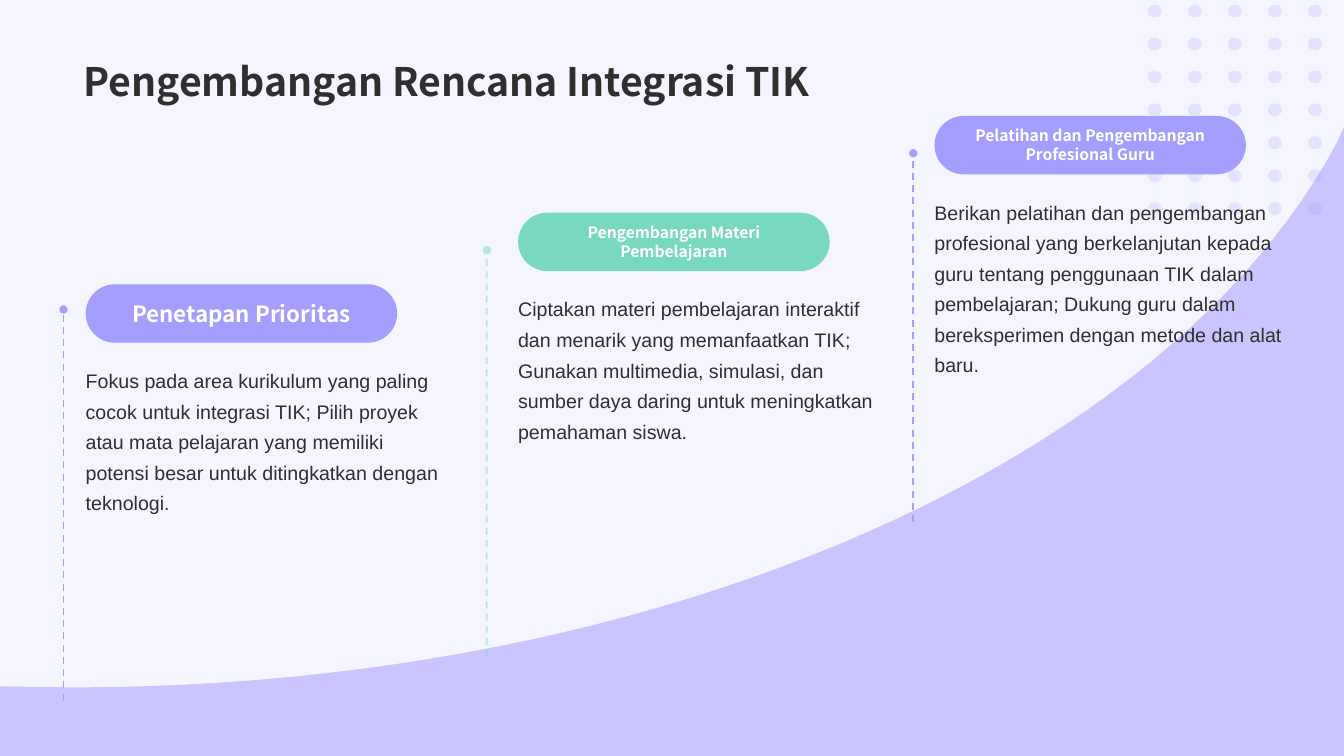
import dataclasses
import itertools

import pptx
import pptx.dml.color
import pptx.enum.dml
import pptx.enum.shapes
import pptx.enum.text
import pptx.oxml
import pptx.oxml.ns
import pptx.util

SHAPES = pptx.enum.shapes.MSO_SHAPE
ANCHORS = pptx.enum.text.MSO_ANCHOR
CELLS_PER_INCH = 10
SLIDE_COLUMNS, SLIDE_ROWS = 133.33, 75


@dataclasses.dataclass(frozen=True)
class Theme:
    background: str = "F5F5FF"
    violet: str = "A49FFF"
    green: str = "79D9C0"
    ink: str = "2F2F2F"
    white: str = "FFFFFF"
    heading_font: str = "Noto Sans CJK SC"
    body_font: str = "Arial"
    title_size: float = 28
    label_size: float = 16
    small_label_size: float = 11.2
    body_size: float = 14
    stem_width: float = 1.25


@dataclasses.dataclass(frozen=True)
class Box:
    """A rectangle in grid cells."""
    left: float
    top: float
    width: float
    height: float

    def lengths(self):
        return [cells(value) for value in dataclasses.astuple(self)]


@dataclasses.dataclass(frozen=True)
class Step:
    box: Box
    color: str
    label: str
    label_size: float
    description: str
    stem_gap: float
    stem_top: float
    stem_opacity: int = 100


THEME = Theme()

STEPS = [
    Step(Box(8.5, 28.2, 36.3, 41.3), THEME.violet, "Penetapan Prioritas", THEME.label_size,
         "Fokus pada area kurikulum yang paling cocok untuk integrasi TIK; Pilih proyek atau mata "
         "pelajaran yang memiliki potensi besar untuk ditingkatkan dengan teknologi.", 2.2, 2.5),
    Step(Box(51.4, 21.1, 36.3, 44.1), THEME.green, "Pengembangan Materi Pembelajaran",
         THEME.small_label_size,
         "Ciptakan materi pembelajaran interaktif dan menarik yang memanfaatkan TIK; Gunakan "
         "multimedia, simulasi, dan sumber daya daring untuk meningkatkan pemahaman siswa.",
         3.1, 3.7, 50),
    Step(Box(92.7, 11.5, 36.3, 40.3), THEME.violet, "Pelatihan dan Pengembangan Profesional Guru",
         THEME.small_label_size,
         "Berikan pelatihan dan pengembangan profesional yang berkelanjutan kepada guru tentang "
         "penggunaan TIK dalam pembelajaran; Dukung guru dalam bereksperimen dengan metode dan "
         "alat baru.", 2.1, 3.7),
]


def cells(count):
    return pptx.util.Inches(count / CELLS_PER_INCH)


def rgb(color):
    return pptx.dml.color.RGBColor.from_string(color)


def append_xml(parent, tag, **attributes):
    element = pptx.oxml.parse_xml(f"<a:{tag} {pptx.oxml.ns.nsdecls('a')}/>")
    for name, value in attributes.items():
        element.set(name, str(value))
    parent.append(element)


def set_opacity(shape, percent):
    for color in shape.element.spPr.iter(pptx.oxml.ns.qn("a:srgbClr")):
        append_xml(color, "alpha", val=percent * 1000)


def paint(shape, color, opacity=100):
    shape.shadow.inherit = False
    shape.fill.solid()
    shape.fill.fore_color.rgb = rgb(color)
    shape.line.fill.background()
    if opacity < 100:
        set_opacity(shape, opacity)


def write(shape, text, font_name, size, color, bold=False):
    shape.text_frame.word_wrap = True
    paragraph = shape.text_frame.paragraphs[0]
    paragraph.text = text
    font = paragraph.font
    font.name, font.size, font.bold = font_name, pptx.util.Pt(size), bold
    font.color.rgb = rgb(color)
    return paragraph


def bezier(start, first, second, end, steps=48):
    """Points along a cubic curve, both ends included."""
    for index in range(steps + 1):
        t = index / steps
        weights = ((1 - t) ** 3, 3 * t * (1 - t) ** 2, 3 * t * t * (1 - t), t ** 3)
        yield tuple(sum(weight * point[axis] for weight, point in
                        zip(weights, (start, first, second, end))) for axis in (0, 1))


def add_dot_pattern(slide, box, columns=5, rows=7):
    """Dots spread evenly over the box, leaving out those the last label covers."""
    dot_width, dot_height = 1.4, 1.3
    covered = {(column, 4) for column in range(3)}
    for column, row in itertools.product(range(columns), range(rows)):
        if (column, row) in covered:
            continue
        left = box.left + column * (box.width - dot_width) / (columns - 1)
        top = box.top + row * (box.height - dot_height) / (rows - 1)
        dot = slide.shapes.add_shape(
            SHAPES.OVAL, *Box(left, top, dot_width, dot_height).lengths())
        paint(dot, THEME.violet, 20)


def add_hill(slide, box):
    """A rising curve filled down to the bottom right corner of the box."""
    right, bottom = box.left + box.width, box.top + box.height
    crest = bezier((7.2, 68.2), (66.1, 68.2), (115.9, 45.5), (132.6, 14.2))
    outline = [(box.left, bottom), (box.left, 68.1), *crest, (right, box.top)]
    builder = slide.shapes.build_freeform(cells(right), cells(bottom))
    builder.add_line_segments([(cells(x), cells(y)) for x, y in outline], close=True)
    paint(builder.convert_to_shape(), THEME.violet, 55)


def add_stem(slide, step):
    """A dashed line rising to a round end left of the step."""
    x = cells(step.box.left - step.stem_gap)
    stem = slide.shapes.add_connector(
        pptx.enum.shapes.MSO_CONNECTOR.STRAIGHT,
        x, cells(step.box.top + step.box.height), x, cells(step.box.top + step.stem_top))
    stem.line.color.rgb = rgb(step.color)
    stem.line.width = pptx.util.Pt(THEME.stem_width)
    stem.line.dash_style = pptx.enum.dml.MSO_LINE.DASH
    if step.stem_opacity < 100:
        set_opacity(stem, step.stem_opacity)
    properties = stem.element.spPr
    append_xml(properties.find(pptx.oxml.ns.qn("a:ln")), "tailEnd", type="oval")
    append_xml(properties, "effectLst")


def add_step(slide, step):
    box = step.box
    add_stem(slide, step)

    label = slide.shapes.add_shape(
        SHAPES.ROUNDED_RECTANGLE, *Box(box.left, box.top, 30.9, 5.8).lengths())
    label.adjustments[0] = 0.5
    paint(label, step.color)
    label.text_frame.vertical_anchor = ANCHORS.MIDDLE
    paragraph = write(label, step.label, THEME.heading_font, step.label_size, THEME.white, True)
    paragraph.alignment = pptx.enum.text.PP_ALIGN.CENTER

    description = slide.shapes.add_textbox(
        *Box(box.left, box.top + 6.7, box.width, 13.3).lengths())
    frame = description.text_frame
    frame.margin_left = frame.margin_right = frame.margin_bottom = 0
    frame.margin_top = cells(1)
    paragraph = write(description, step.description, THEME.body_font, THEME.body_size, THEME.ink)
    paragraph.line_spacing = 1.3
    frame.auto_size = pptx.enum.text.MSO_AUTO_SIZE.SHAPE_TO_FIT_TEXT


def add_title(slide, box, text):
    title = slide.shapes.add_textbox(*box.lengths())
    title.text_frame.vertical_anchor = ANCHORS.BOTTOM
    write(title, text, THEME.heading_font, THEME.title_size, THEME.ink, True)


def main():
    presentation = pptx.Presentation()
    presentation.slide_width = cells(SLIDE_COLUMNS)
    presentation.slide_height = cells(SLIDE_ROWS)
    slide = presentation.slides.add_slide(presentation.slide_layouts[6])
    slide.background.fill.solid()
    slide.background.fill.fore_color.rgb = rgb(THEME.background)

    add_dot_pattern(slide, Box(113.85, 0.45, 17.3, 20.9))
    add_hill(slide, Box(0, 12.6, SLIDE_COLUMNS, SLIDE_ROWS - 12.6))
    for step in STEPS:
        add_step(slide, step)
    add_title(slide, Box(7.3, 1, 118.8, 9.8), "Pengembangan Rencana Integrasi TIK")
    presentation.save("out.pptx")


if __name__ == "__main__":
    main()
